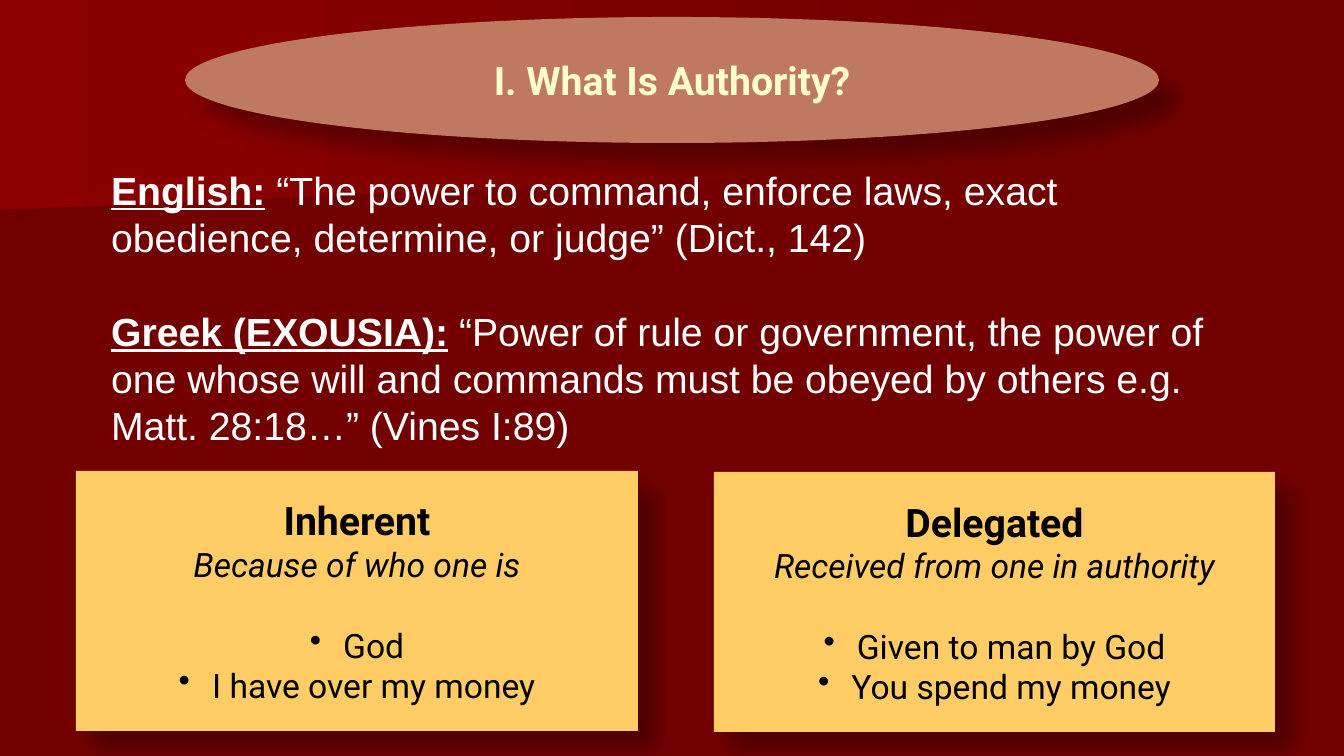
from lxml import etree
from pptx import Presentation
from pptx.dml.color import RGBColor
from pptx.enum.shapes import MSO_SHAPE
from pptx.enum.text import MSO_ANCHOR, MSO_AUTO_SIZE, PP_ALIGN
from pptx.oxml.ns import qn
from pptx.util import Pt

SLIDE_WIDTH, SLIDE_HEIGHT = 1344, 756
SCALE = 12192000 / SLIDE_WIDTH  # EMU in one px
LARGE, SMALL = 28, 24  # text sizes in points
LINE_HEIGHT = 1.2
RECTANGLE, OVAL = MSO_SHAPE.RECTANGLE, MSO_SHAPE.OVAL
TOP, MIDDLE = MSO_ANCHOR.TOP, MSO_ANCHOR.MIDDLE
LEFT, CENTER = PP_ALIGN.LEFT, PP_ALIGN.CENTER
NO_AUTOFIT = MSO_AUTO_SIZE.NONE

COLORS = {
    "background": "720000",
    "band_dark": "6F0000",
    "band_light": "8C0000",
    "oval": "BE7960",
    "title": "FFFFCC",
    "body": "FFFFFF",
    "card": "FFCC66",
    "card_text": "000000",
    "shadow": "000000",
}

DEFINITIONS = [
    ("English:", " “The power to command, enforce laws, exact obedience, "
                 "determine, or judge” (Dict., 142)"),
    ("Greek (EXOUSIA):", " “Power of rule or government, the power of one whose will and "
                         "commands must be obeyed by others e.g. Matt. 28:18…” (Vines I:89)"),
]
CARDS = [
    ((76, 471, 562, 260), "Inherent", "Because of who one is",
     [" God", " I have over my money"]),
    ((714, 472, 561, 260), "Delegated", "Received from one in authority",
     [" Given to man by God", " You spend my money"]),
]


def px(length):
    return round(length * SCALE)


def color(name):
    return RGBColor.from_string(COLORS[name])


def add_run(paragraph, text, size, font, color_name, bold=False, italic=False, underline=False):
    run = paragraph.add_run()
    run.text = text
    run.font.size = Pt(size)
    run.font.name = font
    run.font.color.rgb = color(color_name)
    run.font.bold, run.font.italic, run.font.underline = bold, italic, underline


def format_paragraph(paragraph, size, alignment, lines_before=0, bullet=None, indent=0):
    """Spacing first, then the bullet, as the schema orders them."""
    paragraph.alignment = alignment
    paragraph.line_spacing = Pt(size * LINE_HEIGHT)
    paragraph.space_before = Pt(size * LINE_HEIGHT * lines_before)
    paragraph.space_after = Pt(0)
    properties = paragraph._p.get_or_add_pPr()
    properties.set("marL", str(px(indent)))
    properties.set("indent", str(-px(indent)))
    if bullet:
        etree.SubElement(properties, qn("a:buChar"), char=bullet)
    else:
        etree.SubElement(properties, qn("a:buNone"))


def prepare_frame(shape, anchor):
    frame = shape.text_frame
    frame.word_wrap = True
    frame.auto_size = NO_AUTOFIT
    frame.vertical_anchor = anchor
    return frame


def place(shape, box):
    shape.left, shape.top, shape.width, shape.height = map(px, box)


def add_shadowed_shape(slide, kind, box, color_name):
    shape = slide.shapes.add_shape(kind, *map(px, box))
    shape.fill.solid()
    shape.fill.fore_color.rgb = color(color_name)
    shape.line.fill.background()
    shape.shadow.inherit = False
    effects = shape._element.spPr.find(qn("a:effectLst"))
    shadow = etree.SubElement(effects, qn("a:outerShdw"), blurRad=str(px(21)),
                              dist=str(px(25)), dir="2700000", algn="tl", rotWithShape="0")
    shade = etree.SubElement(shadow, qn("a:srgbClr"), val=COLORS["shadow"])
    etree.SubElement(shade, qn("a:alpha"), val="30000")
    return shape


def add_band(slide, points, start_color):
    builder = slide.shapes.build_freeform(*points[0], scale=SCALE)
    builder.add_line_segments(points[1:], close=True)
    band = builder.convert_to_shape()
    band.shadow.inherit = False
    band.line.fill.background()
    band.fill.gradient()
    band.fill.gradient_angle = 0
    for stop, name in zip(band.fill.gradient_stops, (start_color, "background")):
        stop.color.rgb = color(name)


def add_background(slide):
    fill = slide.background.fill
    fill.solid()
    fill.fore_color.rgb = color("background")
    add_band(slide, [(1045, 154), (0, 219), (0, 102), (1047, 102), (1045, 129)], "band_dark")
    add_band(slide, [(1064, 163), (0, 210), (0, 0), (1064, 0)], "band_light")


def add_title(slide, box):
    add_shadowed_shape(slide, OVAL, box, "oval")
    title = slide.shapes.title
    place(title, box)
    slide.shapes._spTree.append(title._element)  # bring in front of the oval
    paragraph = prepare_frame(title, MIDDLE).paragraphs[0]
    format_paragraph(paragraph, LARGE, CENTER)
    add_run(paragraph, "I. What Is Authority?", LARGE, "Roboto", "title", bold=True)


def add_definitions(slide, box):
    body = slide.placeholders[1]
    place(body, box)
    slide.shapes._spTree.append(body._element)  # bring in front of the bands
    frame = prepare_frame(body, TOP)
    for index, (term, meaning) in enumerate(DEFINITIONS):
        paragraph = frame.add_paragraph() if index else frame.paragraphs[0]
        format_paragraph(paragraph, LARGE, LEFT, lines_before=min(index, 1))
        add_run(paragraph, term, LARGE, "Arial", "body", bold=True, underline=True)
        add_run(paragraph, meaning, LARGE, "Arial", "body")


def add_card(slide, box, heading, summary, examples):
    frame = prepare_frame(add_shadowed_shape(slide, RECTANGLE, box, "card"), MIDDLE)
    paragraph = frame.paragraphs[0]
    format_paragraph(paragraph, LARGE, CENTER)
    add_run(paragraph, heading, LARGE, "Roboto", "card_text", bold=True)

    paragraph = frame.add_paragraph()
    format_paragraph(paragraph, SMALL, CENTER)
    add_run(paragraph, summary, SMALL, "Roboto", "card_text", italic=True)

    for index, example in enumerate(examples):
        paragraph = frame.add_paragraph()
        format_paragraph(paragraph, SMALL, CENTER, lines_before=0 if index else 1,
                         bullet="•", indent=25)
        add_run(paragraph, example, SMALL, "Roboto", "card_text")


def main():
    presentation = Presentation()
    presentation.slide_width = px(SLIDE_WIDTH)
    presentation.slide_height = px(SLIDE_HEIGHT)
    slide = presentation.slides.add_slide(presentation.slide_layouts[1])

    add_background(slide)
    add_title(slide, (185, 17, 974, 126))
    add_definitions(slide, (101, 161, 1142, 292))
    for card in CARDS:
        add_card(slide, *card)

    presentation.save("out.pptx")


if __name__ == "__main__":
    main()
